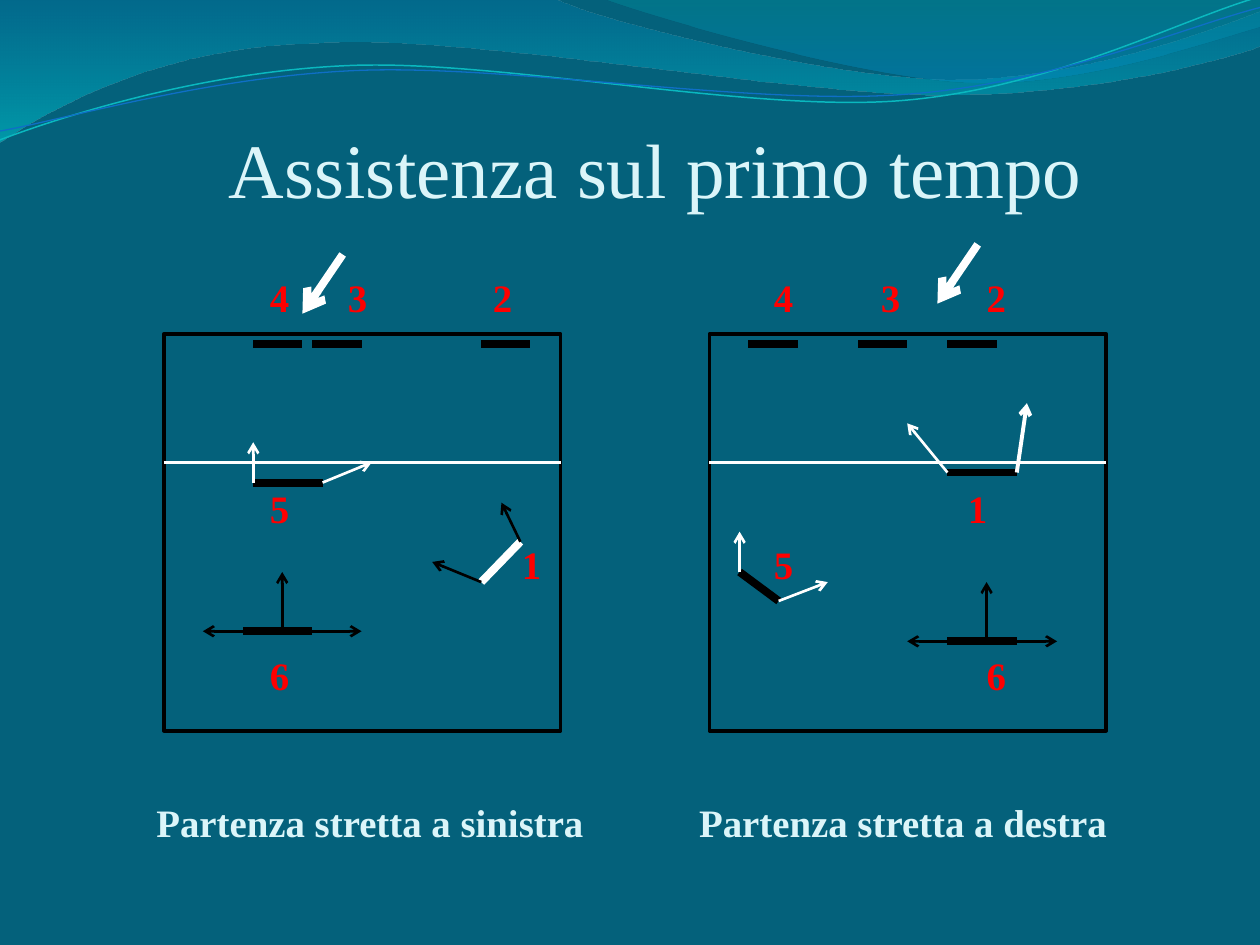
from math import cos, radians, sin
from lxml.etree import SubElement
from pptx import Presentation
from pptx.dml.color import RGBColor as RGB
from pptx.enum.shapes import MSO_CONNECTOR as CONN, MSO_SHAPE as SHAPE
from pptx.enum.text import MSO_ANCHOR as ANCHOR, PP_ALIGN as ALIGN
from pptx.oxml.ns import qn
from pptx.util import Cm, Pt

COLORS = {
    "back": "04617B", "pale": "DBF5F9", "red": "FF0000", "black": "000000",
    "white": "FFFFFF", "aqua": "0AB8BF", "blue": "0F6FC6",
}
FONT = "Times New Roman"
INCH = 2.54
WAVE_TILT = 2.7
COURT_TOP, COURT_SIDE, ATTACK_Y = 2.65, 3.15, 3.67
BLOCK_Y, BLOCK_W = 2.73, 0.39
THICK, MEDIUM, THIN = 4.5, 2.25, 1.5

TITLE = "Assistenza sul primo tempo"
TITLE_BOX = (0.91, 0.77, 8.59, 0.93)
BODY_BOX = (0.5, 2.12, 9, 4.8)
BODY_INSET = 0.1

ROWS = [
    (0, "red", [("4", 2.22), ("3", 2.84), ("2", 3.99),
                ("4", 6.22), ("3", 7.07), ("2", 7.91)]),
    (93.9, "red", [("5", 2.22), ("1", 7.76)]),
    (5.4, "red", [("1", 4.22), ("5", 6.22)]),
    (36.8, "red", [("6", 2.22), ("6", 7.91)]),
    (57.4, "pale", [("Partenza stretta a sinistra", 2.94),
                    ("Partenza stretta a destra", 7.17)]),
]

BANDS = [
    ((0, 0),
     [[(4.4, -0.01)],
      [(4.76, 0.17), (6.64, 0.63), (7.58, 0.63)],
      [(8.53, 0.63), (9.58, 0.26), (10, 0.09)],
      [(10.01, 0.36)],
      [(9.83, 0.44), (8.7, 0.76), (7.46, 0.75)],
      [(6.22, 0.75), (3.82, 0.28), (2.57, 0.34)],
      [(1.29, 0.36), (0.46, 0.83), (-0.01, 1.13)]],
     [(0, "0074A1", 45), (1, "00C6CF", 55)]),
    ((4.79, -0.01),
     [[(5.09, 0.11), (6.82, 0.62), (7.69, 0.65)],
      [(8.56, 0.69), (9.61, 0.32), (10, 0.21)],
      [(10, 0)]],
     [(0, "00A1A9", 30), (0.8, "008BBF", 45)]),
]
WAVES = [
    ((0, 1.11),
     [[(0.48, 0.93), (1.58, 0.57), (2.77, 0.52)],
      [(3.95, 0.47), (5.93, 0.89), (7.13, 0.8)],
      [(8.33, 0.71), (9.38, 0.15), (9.98, -0.02)]], (4.99, 0.575), "aqua", 0.85),
    ((0, 1.04),
     [[(0.47, 0.96), (1.64, 0.61), (2.83, 0.56)],
      [(4.03, 0.51), (5.97, 0.84), (7.17, 0.75)],
      [(8.36, 0.67), (9.41, 0.21), (10, 0.06)]], (5, 0.59), "blue", 0.75),
]

COURTS = [
    {
        "left": 1.3,
        "blocks": [2.01, 2.48, 3.82],
        "bars": [((1.93, 5.01), (2.48, 5.01), "black"),
                 ((3.82, 4.62), (4.13, 4.3), "white"),
                 ((2.01, 3.83), (2.56, 3.83), "black")],
        "arrows": [((2.01, 3.83), (2.01, 3.51), "white", THIN),
                   ((2.56, 3.83), (2.95, 3.67), "white", THIN),
                   ((2.48, 5.01), (2.87, 5.01), "black", THIN),
                   ((2.24, 5.01), (2.24, 4.54), "black", THIN),
                   ((1.93, 5.01), (1.61, 5.01), "black", THIN),
                   ((4.13, 4.3), (3.98, 3.99), "black", THIN),
                   ((3.82, 4.62), (3.43, 4.46), "black", THIN),
                   ((2.72, 2.02), (2.4, 2.49), "white", THICK)],
    },
    {
        "left": 5.63,
        "blocks": [5.94, 6.81, 7.52],
        "bars": [((7.52, 3.75), (8.07, 3.75), "black"),
                 ((7.52, 5.09), (8.07, 5.09), "black"),
                 ((5.87, 4.54), (6.18, 4.77), "black")],
        "arrows": [((7.83, 5.09), (7.83, 4.62), "black", THIN),
                   ((7.99, 5.09), (8.39, 5.09), "black", THIN),
                   ((7.52, 5.09), (7.2, 5.09), "black", THIN),
                   ((5.87, 4.54), (5.87, 4.22), "white", THIN),
                   ((6.18, 4.77), (6.57, 4.62), "white", THIN),
                   ((7.52, 3.75), (7.2, 3.36), "white", THIN),
                   ((8.07, 3.75), (8.15, 3.2), "white", MEDIUM),
                   ((7.76, 1.94), (7.44, 2.41), "white", THICK)],
    },
]


def cm(*inches):
    return [Cm(v * INCH) for v in inches]


def rgb(name):
    return RGB.from_string(COLORS[name])


def set_line(sp, color, width):
    sp.line.color.rgb = rgb(color)
    sp.line.width = Pt(width)


def turn(pt, center, degrees):
    a = radians(degrees)
    dx, dy = pt[0] - center[0], pt[1] - center[1]
    return (center[0] + dx * cos(a) - dy * sin(a),
            center[1] + dx * sin(a) + dy * cos(a))


def add_curve(shapes, start, segments, closed):
    fb = shapes.build_freeform(*cm(*start))
    fb.add_line_segments([cm(*pt) for seg in segments for pt in seg], close=closed)
    sp = fb.convert_to_shape()
    sp.shadow.inherit = False
    outline = next(sp._element.spPr.iter(qn("a:path")))
    lines = iter(outline.findall(qn("a:lnTo")))
    for seg in segments:
        group = [next(lines) for _ in seg]
        if len(group) == 3:
            curve = outline.makeelement(qn("a:cubicBezTo"))
            group[0].addprevious(curve)
            for ln in group:
                curve.append(ln[0])
                outline.remove(ln)
    return sp


def add_band(shapes, start, segments, stops):
    sp = add_curve(shapes, start, segments, True)
    sp.line.fill.background()
    sp.fill.gradient()
    sp.fill.gradient_angle = 270
    for stop, (pos, color, alpha) in zip(sp.fill.gradient_stops, stops):
        stop.position = pos
        stop.color.rgb = RGB.from_string(color)
    for clr, (pos, color, alpha) in zip(sp._element.spPr.iter(qn("a:srgbClr")), stops):
        SubElement(clr, qn("a:alpha"), val=str(alpha * 1000))


def add_wave(shapes, start, segments, center, color, width):
    level = [[turn(pt, center, WAVE_TILT) for pt in seg] for seg in segments]
    sp = add_curve(shapes, turn(start, center, WAVE_TILT), level, False)
    sp.rotation = 360 - WAVE_TILT
    sp.fill.background()
    set_line(sp, color, width)


def add_line(shapes, start, end, color, width, arrow=False):
    cn = shapes.add_connector(CONN.STRAIGHT, *cm(*start, *end))
    set_line(cn, color, width)
    pr = cn._element.spPr
    if arrow:
        SubElement(pr.find(qn("a:ln")), qn("a:tailEnd"), type="arrow")
    SubElement(pr, qn("a:effectLst"))


def add_run(p, text, size, color, bold):
    r = p.add_run()
    r.text = text
    r.font.name, r.font.size, r.font.bold = FONT, Pt(size), bold
    r.font.color.rgb = rgb(color)


def add_title(shapes):
    tf = shapes.add_textbox(*cm(*TITLE_BOX)).text_frame
    tf.word_wrap = True
    tf.margin_left = tf.margin_right = tf.margin_bottom = 0
    tf.vertical_anchor = ANCHOR.BOTTOM
    p = tf.paragraphs[0]
    p.alignment = ALIGN.CENTER
    add_run(p, TITLE, 44, "pale", False)


def add_body(shapes):
    tf = shapes.add_textbox(*cm(*BODY_BOX)).text_frame
    tf.word_wrap = True
    for i, (gap, color, labels) in enumerate(ROWS):
        p = tf.add_paragraph() if i else tf.paragraphs[0]
        p.space_before = Pt(gap)
        tabs = SubElement(p._p.get_or_add_pPr(), qn("a:tabLst"))
        for text, x in labels:
            pos = Cm((x - BODY_BOX[0] - BODY_INSET) * INCH)
            SubElement(tabs, qn("a:tab"), pos=str(int(pos)), algn="ctr")
            add_run(p, "\t" + text, 22.2, color, True)


def add_court(shapes, court):
    left, right = court["left"], court["left"] + COURT_SIDE
    sp = shapes.add_shape(SHAPE.RECTANGLE, *cm(left, COURT_TOP, COURT_SIDE, COURT_SIDE))
    sp.shadow.inherit = False
    sp.fill.background()
    set_line(sp, "black", 2)
    add_line(shapes, (left, ATTACK_Y), (right, ATTACK_Y), "white", THIN)
    for x in court["blocks"]:
        add_line(shapes, (x, BLOCK_Y), (x + BLOCK_W, BLOCK_Y), "black", THICK)
    for start, end, color in court["bars"]:
        add_line(shapes, start, end, color, THICK)
    for start, end, color, width in court["arrows"]:
        add_line(shapes, start, end, color, width, arrow=True)


def main():
    prs = Presentation()
    prs.slide_width, prs.slide_height = cm(10, 7.5)
    s = prs.slides.add_slide(prs.slide_layouts[6])
    s.background.fill.solid()
    s.background.fill.fore_color.rgb = rgb("back")
    for band in BANDS:
        add_band(s.shapes, *band)
    for wave in WAVES:
        add_wave(s.shapes, *wave)
    add_title(s.shapes)
    add_body(s.shapes)
    for court in COURTS:
        add_court(s.shapes, court)
    prs.save("out.pptx")


if __name__ == "__main__":
    main()
